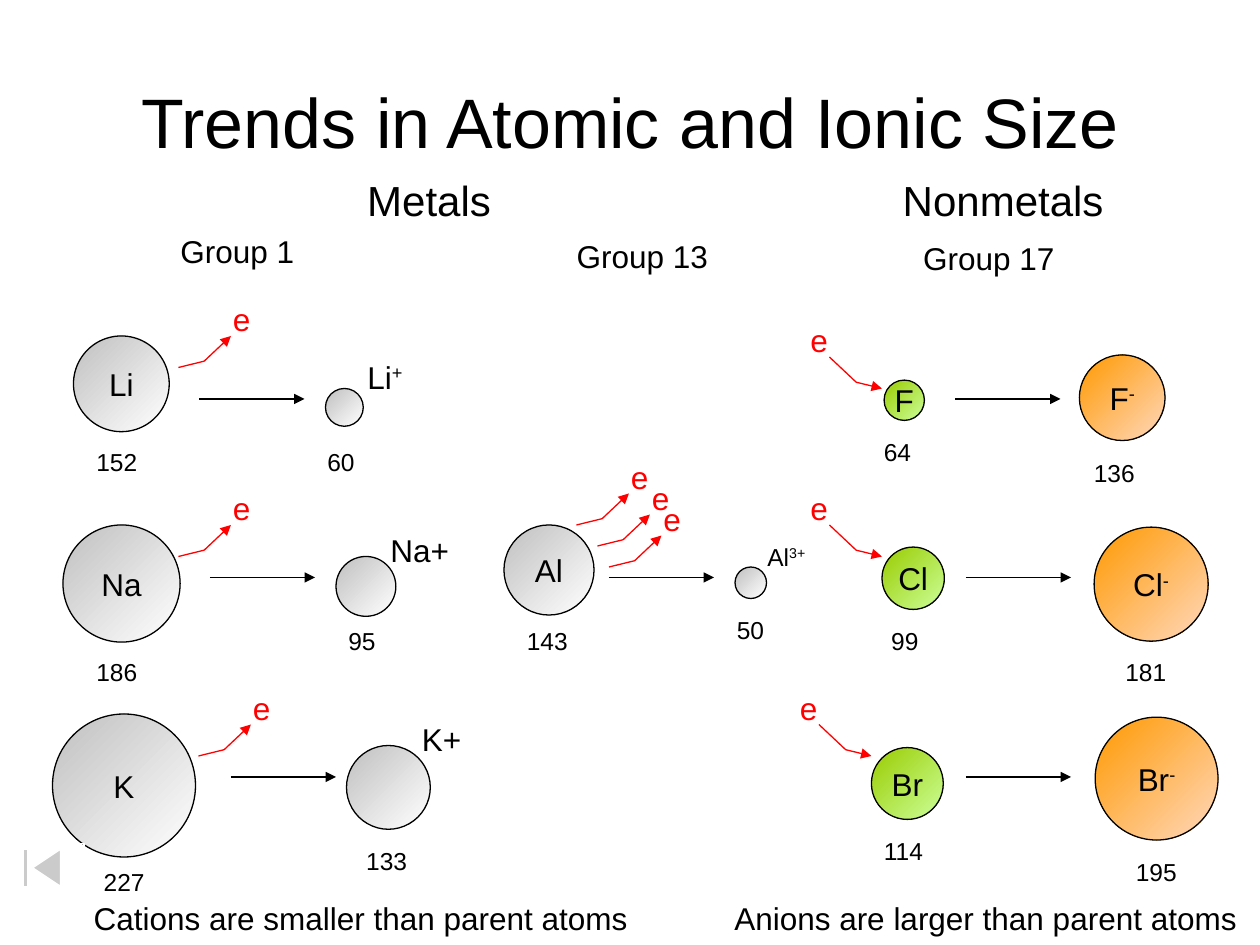
from pptx import Presentation
from pptx import util as u
from pptx.dml.color import RGBColor
from pptx.enum import shapes, text
from pptx.oxml import parse_xml
from pptx.oxml.ns import nsdecls, qn

CELL = u.Inches(1) // 12  # the slide is a grid of 120 columns by 90 rows
FONT = "Arial"
COLORS = {"ink": "000000", "electron": "FF0000", "paper": "FFFFFF"}
GRADIENTS = {
    "metal": ("C0C0C0", "FFFFFF"),
    "nonmetal": ("99CC00", "CCFF99"),
    "anion": ("FF9900", "FFD8BD"),
}
CELLS_PER_PM = 0.06

# kind, symbol inside, charge, radius in pm, (column, row), radius label (column, row)
PARTICLES = [
    ("metal", "Li", "", 152, (7, 32), (8, 42)),
    ("metal", "Na", "", 186, (6, 50), (8, 62)),
    ("metal", "K", "", 227, (5, 68), (8.7, 82)),
    ("metal", "", "", 60, (31, 37), (30, 42)),
    ("metal", "", "", 95, (32, 53), (32, 59)),
    ("metal", "", "", 133, (33, 71), (33.7, 80)),
    ("metal", "Al", "", 143, (48, 50), (49, 59)),
    ("metal", "", "", 50, (70, 54), (69, 58)),
    ("nonmetal", "F", "", 64, (84.2, 36.2), (83, 41)),
    ("nonmetal", "Cl", "", 99, (84, 52.1), (83.7, 59)),
    ("nonmetal", "Br", "", 114, (83, 71.2), (83, 79)),
    ("anion", "F", "-", 136, (102.8, 33.8), (103, 43)),
    ("anion", "Cl", "-", 181, (104.2, 50.2), (106, 62)),
    ("anion", "Br", "-", 195, (104.3, 68.3), (107, 81)),
]
# text, superscript, size, column, row, width
CAPTIONS = [
    ("Metals", "", 24, 33.8, 16, 14.2),
    ("Nonmetals", "", 24, 84.8, 16, 21.6),
    ("Group 1", "", 18, 16, 21.5, 13.2),
    ("Group 13", "", 18, 53.75, 22, 14.9),
    ("Group 17", "", 18, 86.75, 22.2, 14.9),
    ("Li", "+", 18, 33.8, 33.5, 5.9),
    ("Na+", "", 18, 36, 50, 8),
    ("K+", "", 18, 39, 68, 6.2),
    ("Al", "3+", 14, 71.9, 51, 6.2),
    ("Cations are smaller than parent atoms", "", 18, 7.75, 85, 53.3),
    ("Anions are larger than parent atoms", "", 18, 68.75, 85, 50.3),
]
REACTIONS = [(19, 38), (20, 55), (22, 74), (58, 55), (91, 38), (92, 55), (92, 74)]
LOST_ELECTRONS = [(17, 35), (17, 53), (18.9, 72), (54.9, 50), (56.9, 52), (58, 54)]
GAINED_ELECTRONS = [(84, 37), (84, 53), (83, 72)]


def cells(*counts):
    return [round(count * CELL) for count in counts]


def rgb(name):
    return RGBColor.from_string(COLORS.get(name, name))


def write(frame, base, superscript="", size=18, color="ink", align=text.PP_ALIGN.LEFT):
    frame.word_wrap = False
    para = frame.paragraphs[0]
    para.text = base
    para.alignment = align
    if superscript:
        raised = para.add_run()
        raised.text = superscript
        raised.font._element.set("baseline", "30000")
    for span in para.runs:
        span.font.name, span.font.size = FONT, u.Pt(size)
        span.font.color.rgb = rgb(color)


def add_label(page, base, superscript, size, column, row, width, color="ink"):
    height = size * 0.2 + 1.2
    box = page.shapes.add_textbox(*cells(column, row, width, height))
    write(box.text_frame, base, superscript, size, color)
    box.text_frame.auto_size = text.MSO_AUTO_SIZE.SHAPE_TO_FIT_TEXT


def add_title(page, words):
    box = page.shapes.add_textbox(*cells(9, 4, 102, 15))
    write(box.text_frame, words, size=40, align=text.PP_ALIGN.CENTER)
    box.text_frame.word_wrap = True
    box.text_frame.vertical_anchor = text.MSO_ANCHOR.MIDDLE


def add_particle(page, kind, symbol, charge, radius, corner, label_corner):
    """Draw a circle in proportion to its radius, with the radius written below."""
    size = radius * CELLS_PER_PM
    ball = page.shapes.add_shape(shapes.MSO_SHAPE.OVAL, *cells(*corner, size, size))
    ball.shadow.inherit = False
    ball.fill.gradient()
    ball.fill.gradient_angle = 315
    for stop, shade in zip(ball.fill.gradient_stops, GRADIENTS[kind]):
        stop.color.rgb = rgb(shade)
    ball.line.color.rgb = rgb("ink")
    ball.line.width = u.Pt(0.75)
    if symbol:
        write(ball.text_frame, symbol, charge, align=text.PP_ALIGN.CENTER)
        ball.text_frame.vertical_anchor = text.MSO_ANCHOR.MIDDLE
    number = str(radius)
    add_label(page, number, "", 14, *label_corner, 2.4 + 1.3 * len(number))


def style_arrow(arrow, color):
    arrow.line.color.rgb = rgb(color)
    arrow.line.width = u.Pt(0.75)
    arrow.line._get_or_add_ln().append(
        parse_xml(f'<a:tailEnd {nsdecls("a")} type="triangle"/>'))


def add_reaction(page, column, row):
    arrow = page.shapes.add_connector(
        shapes.MSO_CONNECTOR.STRAIGHT, *cells(column, row, column + 10, row))
    style_arrow(arrow, "ink")
    arrow._element.spPr.append(arrow._element.makeelement(qn("a:effectLst")))


def add_electron(page, column, row, gained):
    """Draw a bent arrow from the atom's edge to "e", or back to the edge if gained."""
    side = -1 if gained else 1
    bends = [cells(column + side * dx, row - dy)
             for dx, dy in ((0, 0), (2.45, 0.6), (5, 3))]
    if gained:
        bends.reverse()
    builder = page.shapes.build_freeform(*bends[0])
    builder.add_line_segments(bends[1:], close=False)
    track = builder.convert_to_shape()
    track.shadow.inherit = False
    track.fill.background()
    style_arrow(track, "electron")
    add_label(page, "e", "", 18, column + (-8 if gained else 4), row - 7, 4.1, "electron")


def add_back_button(page):
    button = page.shapes.add_shape(
        shapes.MSO_SHAPE.ACTION_BUTTON_BEGINNING, *cells(0, 80.3, 8, 4.7))
    button.shadow.inherit = False
    button.fill.solid()
    button.fill.fore_color.rgb = rgb("paper")
    tint = button._element.spPr.find(qn("a:solidFill"))[0]
    tint.append(parse_xml(f'<a:alpha {nsdecls("a")} val="50000"/>'))
    button.line.color.rgb = rgb("paper")
    button.line.width = u.Pt(0.75)


def main():
    deck = Presentation()
    deck.slide_width, deck.slide_height = cells(120, 90)
    page = deck.slides.add_slide(deck.slide_layouts[6])
    add_title(page, "Trends in Atomic and Ionic Size")
    for particle in PARTICLES:
        add_particle(page, *particle)
    for start in REACTIONS:
        add_reaction(page, *start)
    for edge in LOST_ELECTRONS:
        add_electron(page, *edge, gained=False)
    for edge in GAINED_ELECTRONS:
        add_electron(page, *edge, gained=True)
    for caption in CAPTIONS:
        add_label(page, *caption)
    add_back_button(page)
    deck.save("out.pptx")


if __name__ == "__main__":
    main()
